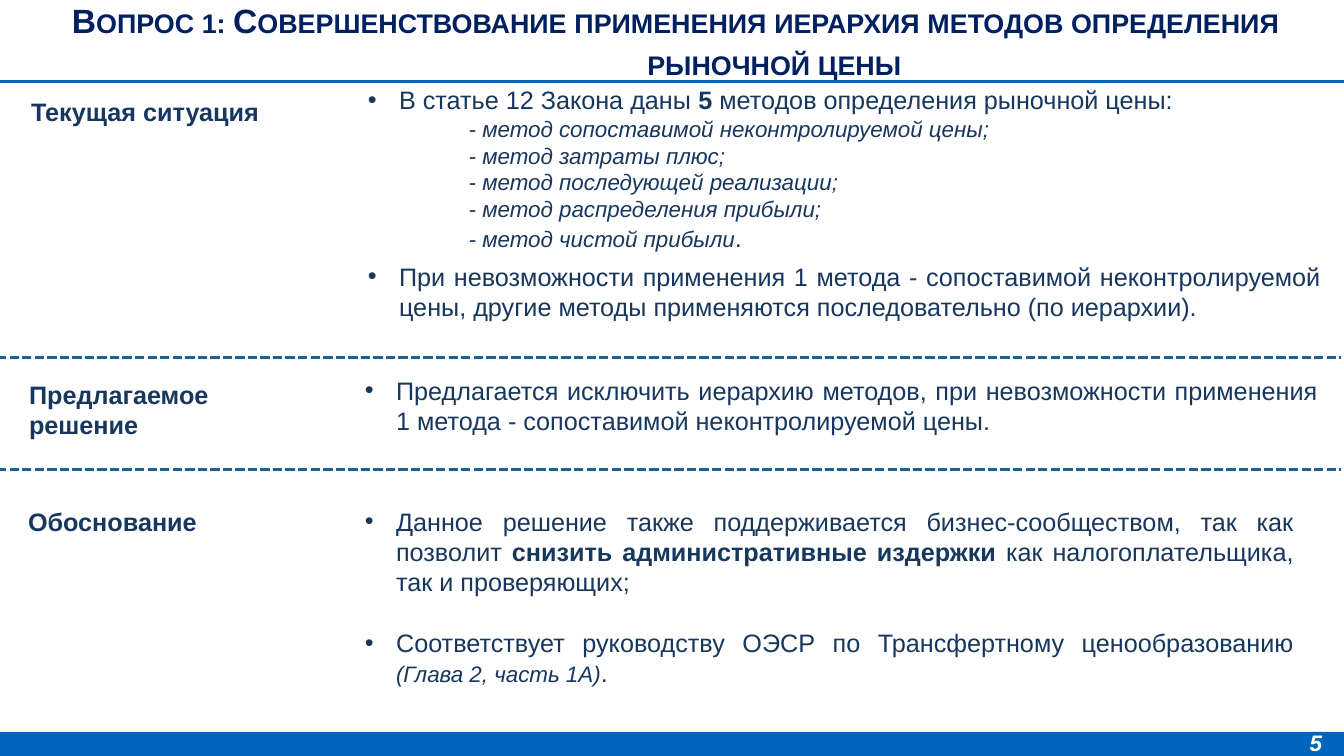
from pptx import Presentation
from pptx.dml.color import RGBColor
from pptx.enum.dml import MSO_LINE
from pptx.enum.shapes import MSO_CONNECTOR, MSO_SHAPE
from pptx.enum.text import MSO_ANCHOR, PP_ALIGN
from pptx.oxml.ns import qn
from pptx.util import Inches, Pt
from lxml.etree import SubElement

BLUE = RGBColor(0x00, 0x65, 0xBD)
TITLE_NAVY = RGBColor(0x00, 0x20, 0x60)
TEXT_NAVY = RGBColor(0x17, 0x37, 0x5E)
DASH_BLUE = RGBColor(0x1D, 0x62, 0x94)
WHITE = RGBColor(0xFF, 0xFF, 0xFF)
FONT = "Arial"
BODY_SIZE, SMALL_SIZE = 18, 16


class SlideBuilder:
    def __init__(self, prs):
        self.s = prs.slides.add_slide(prs.slide_layouts[5])

    def run(self, p, text, size=BODY_SIZE, color=TEXT_NAVY, bold=False, italic=False):
        r = p.add_run()
        r.text = text
        r.font.name = FONT
        r.font.size = Pt(size)
        r.font.color.rgb = color
        r.font.bold = bold
        r.font.italic = italic
        return r

    def indent(self, p, left, first=0):
        pPr = p._p.get_or_add_pPr()
        pPr.set("marL", str(Inches(left)))
        pPr.set("indent", str(Inches(first)))
        return pPr

    def title(self, text, left, top, width, height):
        sp = self.s.shapes.title
        sp.left, sp.top = Inches(left), Inches(top)
        sp.width, sp.height = Inches(width), Inches(height)
        sp.text_frame.vertical_anchor = MSO_ANCHOR.MIDDLE
        p = sp.text_frame.paragraphs[0]
        p.alignment = PP_ALIGN.CENTER
        p.line_spacing = 1.06
        self.indent(p, 1.96, -1.96)
        r = self.run(p, text, 24, TITLE_NAVY, bold=True)
        r._r.get_or_add_rPr().set("cap", "small")

    def bar(self, left, top, width, height):
        sp = self.s.shapes.add_shape(MSO_SHAPE.RECTANGLE, Inches(left), Inches(top),
                                     Inches(width), Inches(height))
        sp.shadow.inherit = False
        sp.fill.solid()
        sp.fill.fore_color.rgb = BLUE
        sp.line.fill.background()

    def rule(self, left, y, color, dash=None):
        line = self.s.shapes.add_connector(MSO_CONNECTOR.STRAIGHT, Inches(left), Inches(y),
                                           Inches(left + 13.33), Inches(y))
        line.line.color.rgb = color
        line.line.width = Pt(2.25)
        if dash:
            line.line.dash_style = dash
        SubElement(line._element.spPr, qn("a:effectLst"))

    def text_box(self, left, top, width, height, anchor=MSO_ANCHOR.TOP):
        sp = self.s.shapes.add_textbox(Inches(left), Inches(top), Inches(width), Inches(height))
        tf = sp.text_frame
        tf.word_wrap = True
        tf.vertical_anchor = anchor
        return tf

    def label(self, text, left, top, width, height):
        tf = self.text_box(left, top, width, height, MSO_ANCHOR.MIDDLE)
        self.run(tf.paragraphs[0], text, bold=True)

    def page_number(self, text, left, top, width, height):
        tf = self.text_box(left, top, width, height)
        self.run(tf.paragraphs[0], text, SMALL_SIZE, WHITE, bold=True, italic=True)

    def body(self, paragraphs, left, top, width, height):
        tf = self.text_box(left, top, width, height)
        for i, (bulleted, before, runs) in enumerate(paragraphs):
            p = tf.add_paragraph() if i else tf.paragraphs[0]
            p.alignment = PP_ALIGN.JUSTIFY
            p.space_before = Pt(before)
            if bulleted:
                pPr = self.indent(p, 0.31, -0.31)
                SubElement(pPr, qn("a:buFont")).set("typeface", FONT)
                SubElement(pPr, qn("a:buChar")).set("char", "•")
            else:
                self.indent(p, 1)
            for text, style in runs:
                self.run(p, text, **style)


def main():
    prs = Presentation()
    prs.slide_width, prs.slide_height = Inches(13.33), Inches(7.5)
    b = SlideBuilder(prs)
    plain, bold = {}, {"bold": True}
    note = {"size": SMALL_SIZE, "italic": True}

    b.bar(0, 7.26, 13.33, 0.24)
    b.rule(0, 0.81, BLUE)
    b.title("Вопрос 1: Совершенствование применения иерархия методов определения рыночной цены",
            0.1, 0, 13.2, 0.79)
    for y in (3.55, 4.66):
        b.rule(-0.03, y, DASH_BLUE, MSO_LINE.SQUARE_DOT)

    b.label("Текущая ситуация", 0.21, 0.91, 2.67, 0.4)
    b.label("Предлагаемое решение", 0.19, 3.71, 2.67, 0.71)
    b.label("Обоснование", 0.18, 4.97, 1.96, 0.4)

    methods = ["- метод сопоставимой неконтролируемой цены;", "- метод затраты плюс;",
               "- метод последующей реализации;", "- метод распределения прибыли;"]
    b.body([
        (True, 6, [("В статье 12 Закона даны ", plain), ("5 ", bold),
                   ("методов определения рыночной цены:", plain)]),
        *[(False, 0, [(method, note)]) for method in methods],
        (False, 0, [("- метод чистой прибыли", note), (".", plain)]),
        (True, 6, [("При невозможности применения 1 метода - сопоставимой неконтролируемой цены, "
                    "другие методы применяются последовательно (по иерархии).", plain)]),
    ], 3.55, 0.79, 9.65, 2.47)
    b.body([
        (True, 0, [("Предлагается исключить иерархию методов, при невозможности применения "
                    "1 метода - сопоставимой неконтролируемой цены.", plain)]),
    ], 3.52, 3.67, 9.65, 0.71)
    b.body([
        (True, 6, [("Данное решение также поддерживается бизнес-сообществом, так как позволит ", plain),
                   ("снизить административные издержки ", bold),
                   ("как налогоплательщика, так и проверяющих;", plain)]),
        (True, 22, [("Соответствует руководству ОЭСР по Трансфертному ценообразованию ", plain),
                    ("(Глава 2, часть 1А)", note), (".", plain)]),
    ], 3.52, 4.97, 9.41, 1.92)

    b.page_number("5", 12.89, 7.18, 0.44, 0.37)
    prs.save("out.pptx")


if __name__ == "__main__":
    main()
